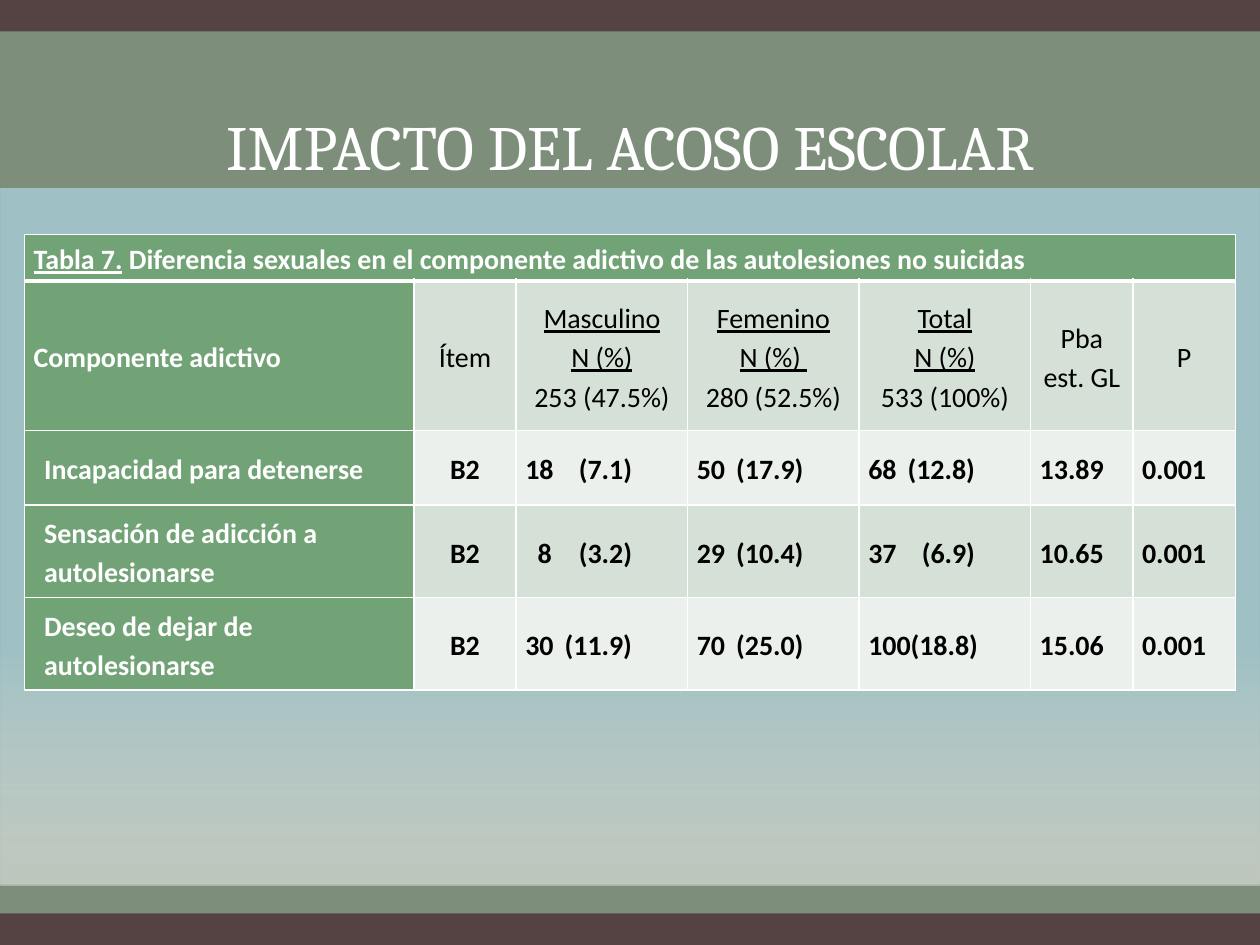
from lxml.etree import SubElement
from pptx import Presentation
from pptx.dml.color import RGBColor
from pptx.enum.shapes import MSO_SHAPE
from pptx.enum.text import MSO_ANCHOR, PP_ALIGN
from pptx.oxml.ns import qn
from pptx.util import Pt

WHITE, BLACK = "FFFFFF", "000000"
GREEN, LIGHT, PALE = "72A376", "D5E0D6", "EBF0EC"
COLUMN_WIDTHS = [222.5, 58.5, 98, 98, 98, 58.5, 58.5]
ROW_HEIGHTS = [26.5, 85.5, 42.5, 53, 53]
CAPTION = ["Tabla 7.", " Diferencia sexuales en el componente adictivo de las autolesiones no suicidas"]
HEADINGS = [
    ["Componente adictivo"],
    ["Ítem"],
    ["Masculino", "N (%)", "253 (47.5%)"],
    ["Femenino", "N (%) ", "280 (52.5%)"],
    ["Total", "N (%)", "533 (100%)"],
    ["Pba est. GL"],
    ["P"],
]
DATA = [
    ["Incapacidad para detenerse", "B2", "18\t(7.1)", "50\t(17.9)", "68\t(12.8)", "13.89", "0.001"],
    ["Sensación de adicción a autolesionarse", "B2", "\t8\t(3.2)", "29\t(10.4)", "37\t(6.9)", "10.65", "0.001"],
    ["Deseo de dejar de autolesionarse", "B2", "30\t(11.9)", "70\t(25.0)", "100(18.8)", "15.06", "0.001"],
]
COUNT_TABS = [(7, "l"), (61, "r")]


def color(value):
    return RGBColor.from_string(value)


def set_format(target, values):
    for name, value in values.items():
        setattr(target, name, value)


def add_run(paragraph, text, font_color=BLACK, name="Calibri", size=16, **font_format):
    run = paragraph.add_run()
    run.text = text
    set_format(run.font, {"name": name, "size": Pt(size), **font_format})
    run.font.color.rgb = color(font_color)


def add_band(slide, box, stops):
    """Draw a rectangle behind the title; stops are (position, colour, opacity %)."""
    band = slide.shapes.add_shape(MSO_SHAPE.RECTANGLE, *map(Pt, box))
    band.shadow.inherit = False
    band.line.fill.background()
    if len(stops) == 1:
        band.fill.solid()
        band.fill.fore_color.rgb = color(stops[0][1])
    else:
        band.fill.gradient()
        band.fill.gradient_angle = 270
        for stop, (position, value, _) in zip(band.fill.gradient_stops, stops):
            stop.color.rgb = color(value)
            stop.position = position
    for element, (_, _, opacity) in zip(list(band.element.iter(qn("a:srgbClr"))), stops):
        if opacity < 100:
            SubElement(element, qn("a:alpha"), val=str(opacity * 1000))
    slide.shapes.title.element.addprevious(band.element)


def add_backdrop(slide, box):
    left, top, width, height = box
    add_band(slide, box, [(0, "554343", 100)])
    add_band(slide, (left, top + 18, width, height - 36), [(0, "829782", 90)])
    add_band(slide, (left, top + 108, width, 398), [(0.66, "A8CDD7", 79), (1, WHITE, 50)])


def fill_title(slide, box, text):
    title = slide.shapes.title
    set_format(title, dict(zip(("left", "top", "width", "height"), map(Pt, box))))
    title.text_frame.vertical_anchor = MSO_ANCHOR.BOTTOM
    paragraph = title.text_frame.paragraphs[0]
    paragraph.alignment = PP_ALIGN.CENTER
    add_run(paragraph, text, WHITE, "Cambria", 36)


def style_cell(cell, fill, top=1, bottom=1):
    """Set margins, white borders of the given weights, and the fill."""
    set_format(cell, {
        "margin_left": Pt(5.2), "margin_right": Pt(5.2), "margin_top": 0, "margin_bottom": 0,
        "vertical_anchor": MSO_ANCHOR.MIDDLE,
    })
    properties = cell._tc.get_or_add_tcPr()
    for side, weight in zip("LRTB", (1, 1, top, bottom)):
        line = SubElement(properties, qn(f"a:ln{side}"), w=str(Pt(weight)))
        SubElement(SubElement(line, qn("a:solidFill")), qn("a:srgbClr"), val=WHITE)
    cell.fill.solid()
    cell.fill.fore_color.rgb = color(fill)


def format_paragraph(paragraph, alignment=PP_ALIGN.LEFT, indent=0, tabs=()):
    properties = paragraph._p.get_or_add_pPr()
    if indent:
        properties.set("marL", str(Pt(indent)))
    if tabs:
        tab_list = SubElement(properties, qn("a:tabLst"))
        for position, kind in tabs:
            SubElement(tab_list, qn("a:tab"), pos=str(Pt(position)), algn=kind)
    set_format(paragraph, {"alignment": alignment, "line_spacing": 1.15})


def fill_caption(table):
    for cell in table.rows[0].cells:
        style_cell(cell, GREEN, bottom=3)
    caption = table.cell(0, 0)
    caption.merge(table.cell(0, len(COLUMN_WIDTHS) - 1))
    paragraph = caption.text_frame.paragraphs[0]
    format_paragraph(paragraph)
    for text, underline in zip(CAPTION, (True, False)):
        add_run(paragraph, text, WHITE, bold=True, underline=underline)


def fill_headings(table):
    for column, (cell, lines) in enumerate(zip(table.rows[1].cells, HEADINGS)):
        first = column == 0
        style_cell(cell, GREEN if first else LIGHT, top=3)
        for index, text in enumerate(lines):
            frame = cell.text_frame
            paragraph = frame.add_paragraph() if index else frame.paragraphs[0]
            format_paragraph(paragraph, PP_ALIGN.LEFT if first else PP_ALIGN.CENTER)
            add_run(paragraph, text, WHITE if first else BLACK, bold=first,
                    underline=index < len(lines) - 1)


def fill_data(table):
    for row, values in enumerate(DATA):
        for column, text in enumerate(values):
            first = column == 0
            cell = table.cell(row + 2, column)
            style_cell(cell, GREEN if first else (PALE, LIGHT)[row % 2])
            paragraph = cell.text_frame.paragraphs[0]
            format_paragraph(paragraph, PP_ALIGN.CENTER if column == 1 else PP_ALIGN.LEFT,
                             indent=6 if first else 0, tabs=COUNT_TABS if "\t" in text else ())
            add_run(paragraph, text, WHITE if first else BLACK, bold=True)


def add_results_table(slide, left, top):
    frame = slide.shapes.add_table(
        len(ROW_HEIGHTS), len(COLUMN_WIDTHS), Pt(left), Pt(top),
        Pt(sum(COLUMN_WIDTHS)), Pt(sum(ROW_HEIGHTS)))
    table = frame.table
    set_format(table, {"first_row": False, "horz_banding": False})
    for column, width in zip(table.columns, COLUMN_WIDTHS):
        column.width = Pt(width)
    for row, height in zip(table.rows, ROW_HEIGHTS):
        row.height = Pt(height)
    fill_caption(table)
    fill_headings(table)
    fill_data(table)


def main():
    presentation = Presentation()
    set_format(presentation, {"slide_width": Pt(720), "slide_height": Pt(540)})
    slide = presentation.slides.add_slide(presentation.slide_layouts[5])
    add_backdrop(slide, (0, 0, 720, 540))
    fill_title(slide, (36, 18, 648, 90), "IMPACTO DEL ACOSO ESCOLAR")
    add_results_table(slide, 14, 134)
    presentation.save("out.pptx")


if __name__ == "__main__":
    main()
